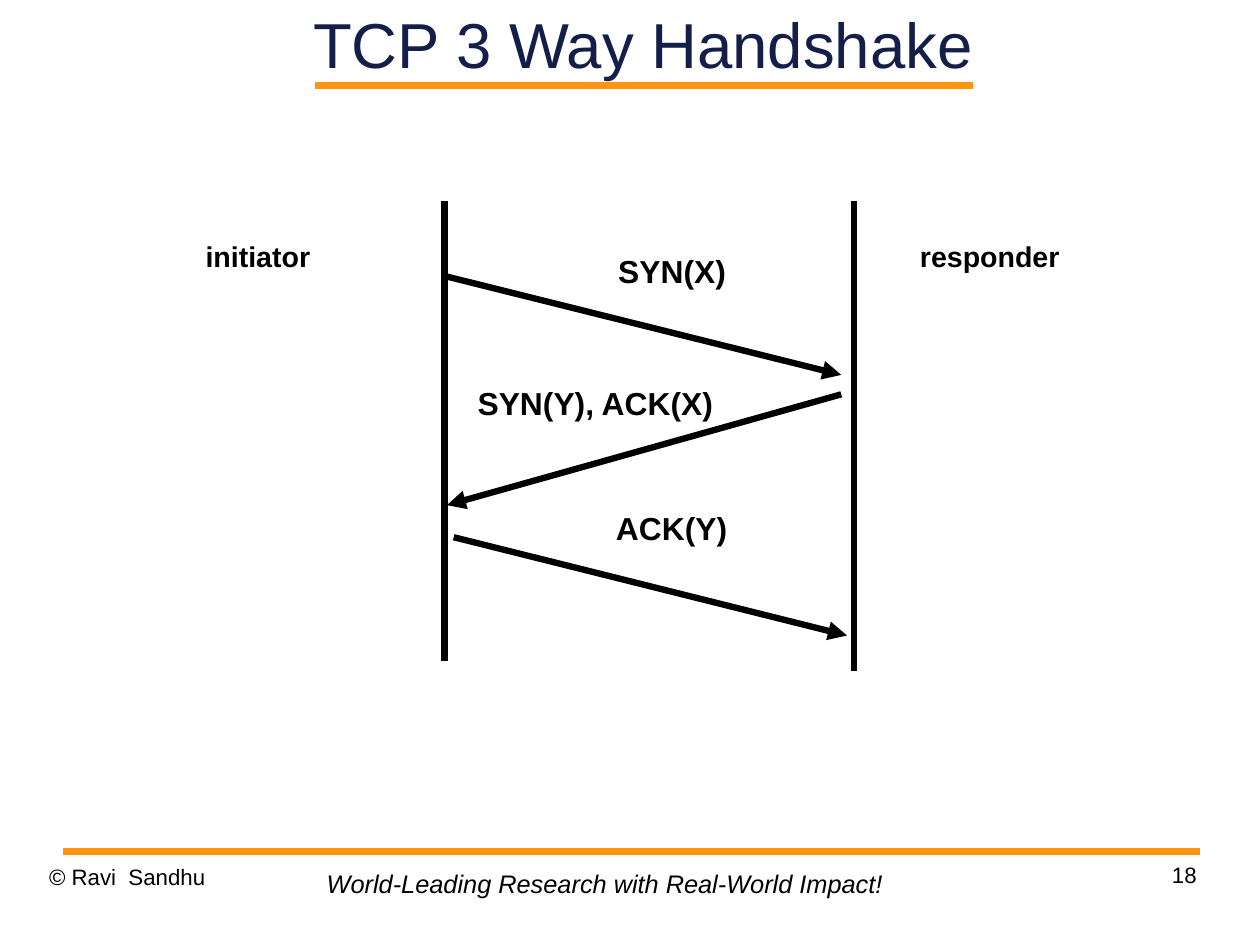
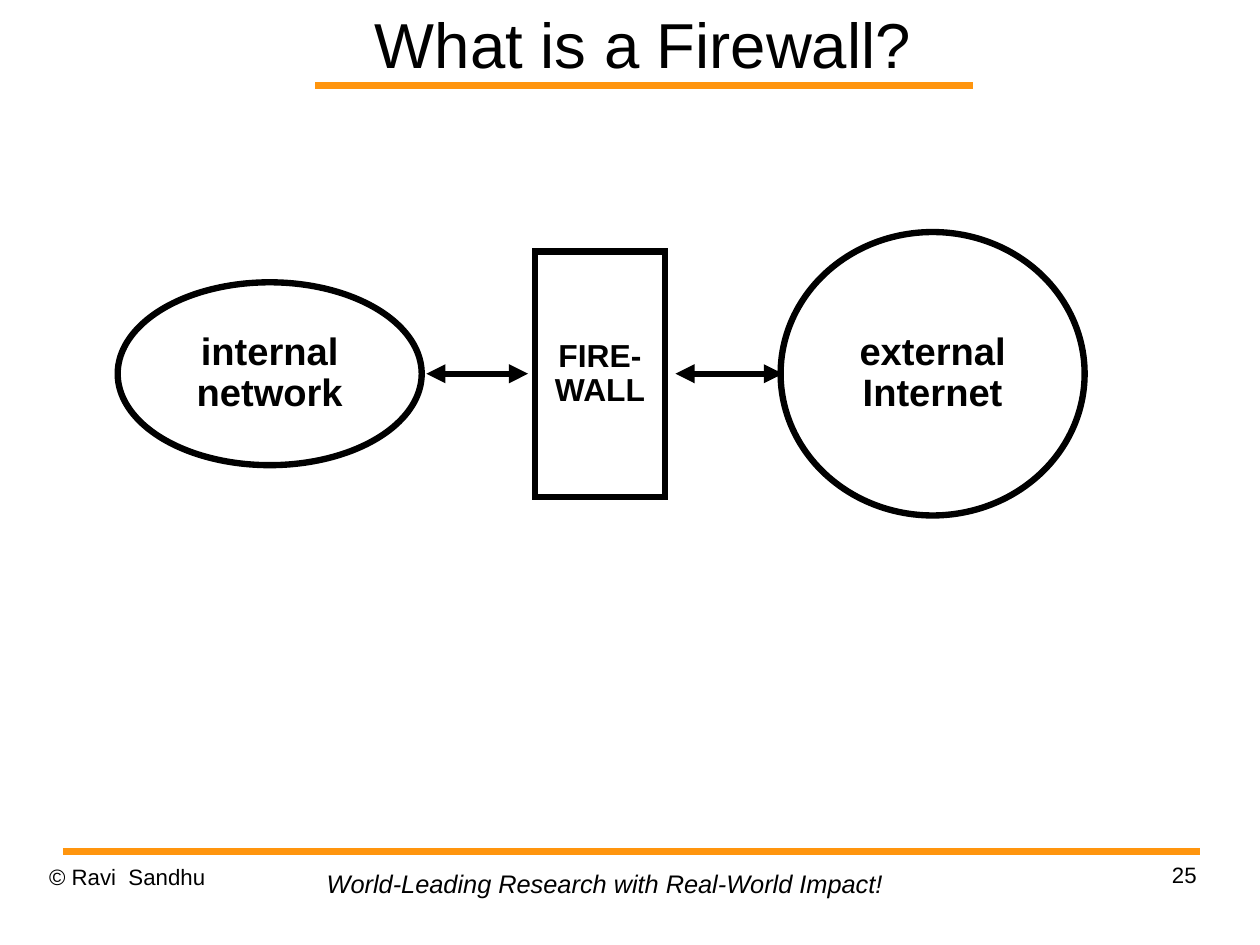
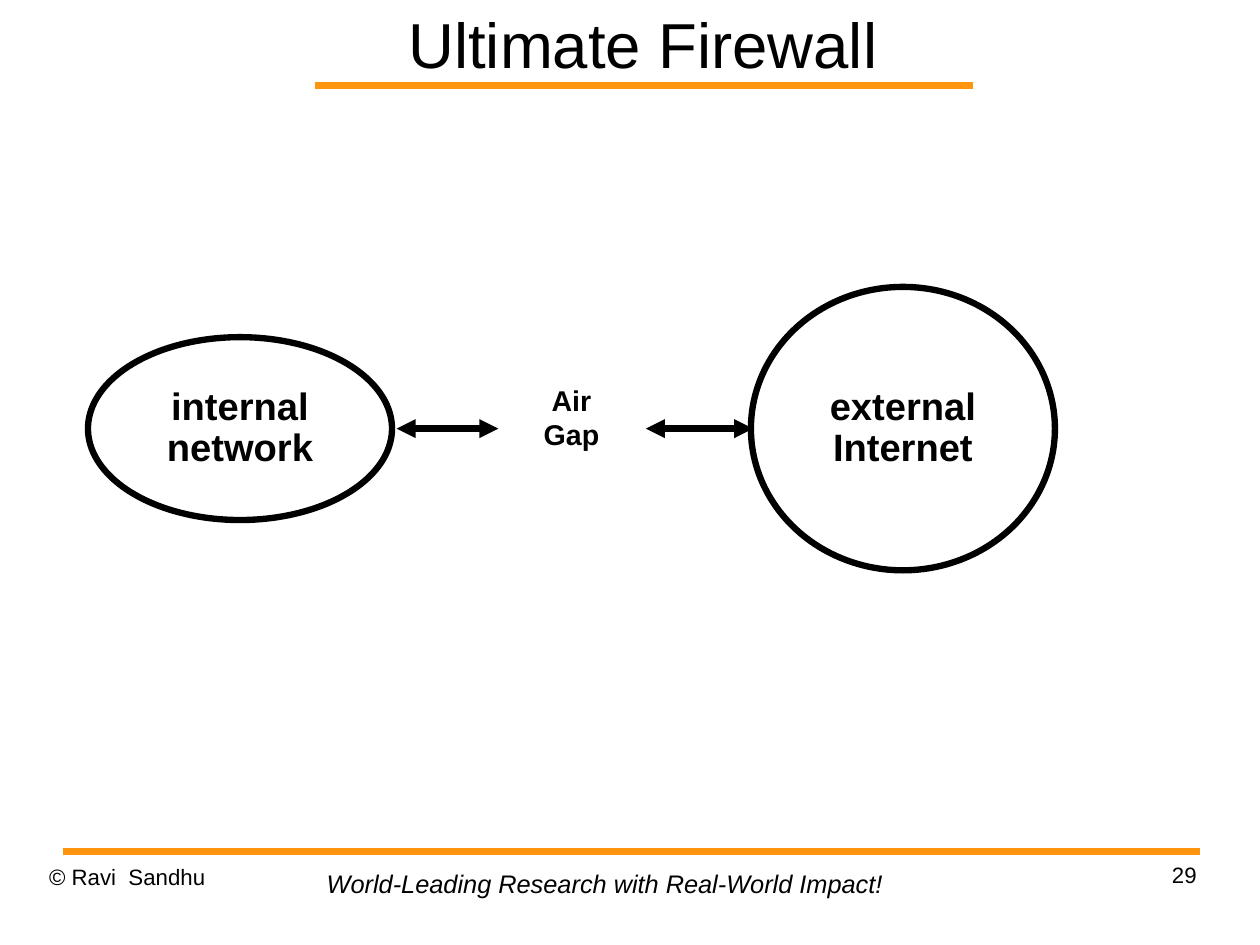
from pptx import Presentation
from pptx.dml.color import RGBColor
from pptx.enum.shapes import MSO_CONNECTOR, MSO_SHAPE
from pptx.enum.text import MSO_ANCHOR, PP_ALIGN
from pptx.oxml.ns import qn
from pptx.util import Inches, Pt
from lxml import etree

LEFT, CENTER, RIGHT = PP_ALIGN.LEFT, PP_ALIGN.CENTER, PP_ALIGN.RIGHT
TOP, MIDDLE = MSO_ANCHOR.TOP, MSO_ANCHOR.MIDDLE
OVAL, RECTANGLE = MSO_SHAPE.OVAL, MSO_SHAPE.RECTANGLE
STRAIGHT = MSO_CONNECTOR.STRAIGHT

BLACK = RGBColor(0x00, 0x00, 0x00)
NAVY = RGBColor(0x13, 0x1F, 0x49)
ORANGE = RGBColor(0xFF, 0x95, 0x0E)
FONT = "Arial"
RULE_WIDTH, DRAWING_WIDTH = 4.31, 4
PADDING = (0.1, 0.05)
PAGE_WIDTH, PAGE_HEIGHT = 28 / 2.54, 21 / 2.54  # 28 by 21 cm

# Content
COPYRIGHT = "© Ravi  Sandhu"
MOTTO = "World-Leading Research with Real-World Impact!"
RULES = [((2.76, 0.75), (8.51, 0.75)), ((0.55, 7.45), (10.5, 7.45))]

LIFELINES = [((3.89, 1.76), (3.89, 5.78)), ((7.47, 1.76), (7.47, 5.87))]
MESSAGES = [((3.91, 2.42), (7.36, 3.28)),
            ((7.36, 3.45), (3.91, 4.42)),
            ((3.97, 4.7), (7.41, 5.56))]
HANDSHAKE_LABELS = [  # text, box, size
    ("initiator", (1.7, 2.04, 1.43, 0.51), 18),
    ("responder", (7.95, 2.04, 1.84, 0.51), 18),
    ("SYN(X)", (5.31, 2.15, 1.15, 0.44), 20),
    ("SYN(Y), ACK(X)", (4.08, 3.31, 2.28, 0.44), 20),
    ("ACK(Y)", (5.29, 4.4, 1.19, 0.44), 20),
]

# Networks and links, measured from the left edge of the internal network
NETWORKS = [("internal\nnetwork", 0, 2.66, 1.6),
            ("external\nInternet", 5.8, 2.66, 2.48)]
LINKS = [(2.7, 3.59), (4.88, 5.82)]


def write(frame, text, size=18, color=BLACK, bold=False, italic=False,
          align=LEFT, anchor=TOP, padding=PADDING, wrap=False, spacing=None):
    frame.word_wrap = wrap
    frame.vertical_anchor = anchor
    frame.margin_left = frame.margin_right = Inches(padding[0])
    frame.margin_top = frame.margin_bottom = Inches(padding[1])
    for index, line in enumerate(text.split("\n")):
        para = frame.add_paragraph() if index else frame.paragraphs[0]
        para.alignment = align
        if spacing:
            para.line_spacing = spacing
        span = para.add_run()
        span.text = line
        font = span.font
        font.name, font.size, font.color.rgb = FONT, Pt(size), color
        font.bold, font.italic = bold, italic


def add_text(page, text, area, **style):
    box = page.shapes.add_textbox(*map(Inches, area))
    write(box.text_frame, text, **style)


def add_line_part(line, name, **attributes):
    """Add a corner style or an arrowhead to an outline."""
    etree.SubElement(line._get_or_add_ln(), qn(f"a:{name}"), **attributes)


def add_node(page, kind, text, area, size):
    node = page.shapes.add_shape(kind, *map(Inches, area))
    node.shadow.inherit = False
    node.fill.background()
    node.line.color.rgb = BLACK
    node.line.width = Pt(DRAWING_WIDTH)
    add_line_part(node.line, "miter", lim="800000")
    write(node.text_frame, text, size=size, bold=True, align=CENTER,
          anchor=MIDDLE, spacing=0.9)


def add_line(page, start, end, color=BLACK, width=DRAWING_WIDTH, arrows=()):
    """Draw a line; arrows lists the ends with a head: headEnd, tailEnd."""
    connector = page.shapes.add_connector(STRAIGHT, *map(Inches, start + end))
    connector.line.color.rgb = color
    connector.line.width = Pt(width)
    for name in arrows:
        add_line_part(connector.line, name, type="triangle")
    etree.SubElement(connector._element.spPr, qn("a:effectLst"))


def add_page(deck, title, number, title_color=BLACK):
    page = deck.slides.add_slide(deck.slide_layouts[6])
    for start, end in RULES:
        add_line(page, start, end, color=ORANGE, width=RULE_WIDTH)
    footer = dict(size=14, padding=(0, 0), wrap=True, spacing=1.01)
    add_text(page, COPYRIGHT, (0.43, 7.55, 2.57, 0.57), **footer)
    add_text(page, str(number), (7.9, 7.53, 2.57, 0.57), align=RIGHT, **footer)
    add_text(page, MOTTO, (2.76, 7.55, 5.08, 0.37), size=16, italic=True)
    add_text(page, title, (2.41, 0, 6.43, 0.75), size=40, color=title_color,
             align=CENTER, anchor=MIDDLE, padding=(0, 0), wrap=True)
    return page


def add_networks(page, left, middle):
    for text, offset, width, height in NETWORKS:
        area = (left + offset, middle - height / 2, width, height)
        add_node(page, OVAL, text, area, 24)
    for start, end in LINKS:
        add_line(page, (left + start, middle), (left + end, middle),
                 arrows=("headEnd", "tailEnd"))


def main():
    deck = Presentation()
    deck.slide_width = Inches(PAGE_WIDTH)
    deck.slide_height = Inches(PAGE_HEIGHT)

    # Handshake
    page = add_page(deck, "TCP 3 Way Handshake", 18, title_color=NAVY)
    for start, end in LIFELINES:
        add_line(page, start, end)
    for start, end in MESSAGES:
        add_line(page, start, end, arrows=("tailEnd",))
    for text, area, size in HANDSHAKE_LABELS:
        add_text(page, text, area, size=size, bold=True)

    # Firewall between the networks
    page = add_page(deck, "What is a Firewall?", 25)
    add_networks(page, 1.03, 3.27)
    add_node(page, RECTANGLE, "FIRE-\nWALL", (4.68, 2.2, 1.14, 2.15), 20)

    # Air gap between the networks
    page = add_page(deck, "Ultimate Firewall", 29)
    add_networks(page, 0.77, 3.75)
    add_text(page, "Air\nGap", (4.57, 3.3, 0.86, 0.91), bold=True, align=CENTER)

    deck.save("out.pptx")


if __name__ == "__main__":
    main()
